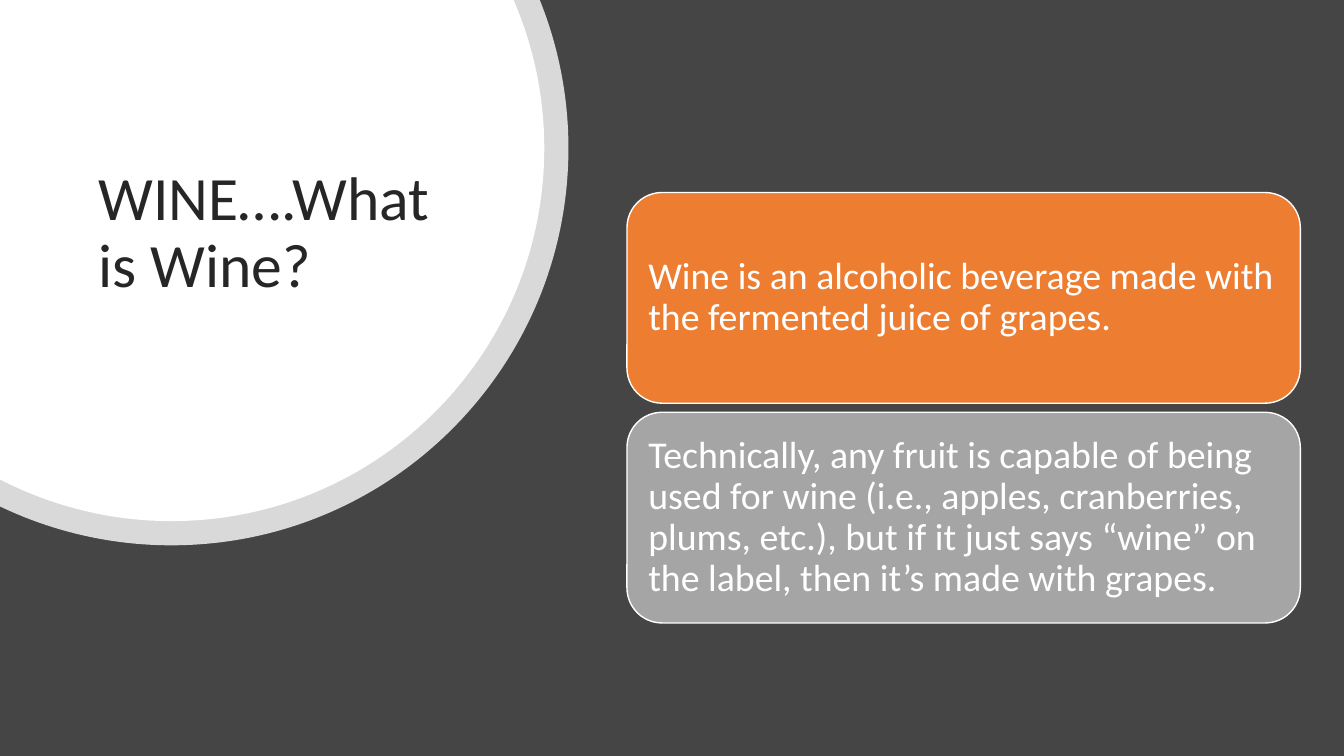
from dataclasses import dataclass
from itertools import pairwise
from math import acos, asin, cos, pi, sin, tan

from lxml.etree import SubElement
from pptx import Presentation
from pptx.dml.color import RGBColor
from pptx.enum.shapes import MSO_SHAPE
from pptx.enum.text import MSO_ANCHOR, PP_ALIGN
from pptx.oxml.ns import qn
from pptx.shapes.autoshape import Shape
from pptx.slide import Slide
from pptx.util import Pt

PX = 9144  # EMU per px, 100 px to the inch


@dataclass(frozen=True)
class Theme:
    font: str = "Calibri"
    background: str = "454545"
    white: str = "FFFFFF"
    ink: str = "262626"
    orange: str = "ED7D31"
    gray: str = "A5A5A5"
    title_size: int = 44
    card_size: int = 27


@dataclass(frozen=True)
class Disc:
    radius: int
    opacity: int  # percent


@dataclass(frozen=True)
class Card:
    text: str
    fill: str


THEME = Theme()
DISC_X, DISC_Y = 170, 147
DISCS = [Disc(394, 80), Disc(370, 100)]
CARD_X, CARD_Y, CARD_W, CARD_H, CARD_GAP, CARD_INSET = 622, 191, 668, 209, 9, 11
CARDS = [
    Card("Wine is an alcoholic beverage made with the fermented juice of grapes.", THEME.orange),
    Card(
        "Technically, any fruit is capable of being used for wine (i.e., apples, "
        "cranberries, plums, etc.), but if it just says “wine” on the label, "
        "then it’s made with grapes.",
        THEME.gray,
    ),
]


def rgb(color: str) -> RGBColor:
    return RGBColor.from_string(color)


def write(sp: Shape, text: str, size: int, color: str) -> None:
    tf = sp.text_frame
    tf.word_wrap = True
    tf.vertical_anchor = MSO_ANCHOR.MIDDLE
    p = tf.paragraphs[0]
    p.text = text
    p.alignment = PP_ALIGN.LEFT
    p.line_spacing = 0.9
    p.font.name = THEME.font
    p.font.size = Pt(size)
    p.font.color.rgb = rgb(color)


def arc_points(radius: int) -> list[tuple[int, int]]:
    """Bezier points from the top edge of the slide to its left edge."""

    def point(angle: float, pull: float = 0) -> tuple[int, int]:
        x = DISC_X + radius * (cos(angle) - pull * sin(angle))
        y = DISC_Y + radius * (sin(angle) + pull * cos(angle))
        return round(x * PX), round(y * PX)

    angles = [-asin(DISC_Y / radius), 0, pi / 2, acos(-DISC_X / radius)]
    points = [point(angles[0])]
    for a, b in pairwise(angles):
        pull = 4 / 3 * tan((b - a) / 4)
        points += [point(a, pull), point(b, -pull), point(b)]
    return points


def draw_disc(s: Slide, disc: Disc) -> None:
    """Draw the part of the disc that lies inside the slide's top left corner."""
    builder = s.shapes.build_freeform(0, 0)
    builder.add_line_segments(arc_points(disc.radius), close=True)
    sp = builder.convert_to_shape()

    # Turn each three segments after the top edge into one curve
    segments = list(sp._element.iter(qn("a:lnTo")))[1:]
    for i in range(0, len(segments), 3):
        trio = segments[i:i + 3]
        outline = trio[0].getparent()
        curve = SubElement(outline, qn("a:cubicBezTo"))
        outline.replace(trio[0], curve)
        for segment in trio:
            curve.append(segment[0])
        for segment in trio[1:]:
            outline.remove(segment)

    sp.shadow.inherit = False
    sp.line.fill.background()
    sp.fill.solid()
    sp.fill.fore_color.rgb = rgb(THEME.white)
    if disc.opacity < 100:
        color = next(sp._element.spPr.iter(qn("a:srgbClr")))
        SubElement(color, qn("a:alpha"), val=str(disc.opacity * 1000))


def draw_card(s: Slide, card: Card, y: int) -> None:
    sp = s.shapes.add_shape(
        MSO_SHAPE.ROUNDED_RECTANGLE, CARD_X * PX, y * PX, CARD_W * PX, CARD_H * PX
    )
    sp.shadow.inherit = False
    sp.fill.solid()
    sp.fill.fore_color.rgb = rgb(card.fill)
    sp.line.color.rgb = rgb(THEME.white)
    sp.line.width = Pt(1)
    tf = sp.text_frame
    tf.margin_left = tf.margin_right = tf.margin_top = tf.margin_bottom = CARD_INSET * PX
    write(sp, card.text, THEME.card_size, THEME.white)


def main() -> None:
    prs = Presentation()
    prs.slide_width, prs.slide_height = 12192000, 750 * PX
    s = prs.slides.add_slide(prs.slide_layouts[6])
    s.background.fill.solid()
    s.background.fill.fore_color.rgb = rgb(THEME.background)

    # Corner discs
    for disc in DISCS:
        draw_disc(s, disc)

    # Title
    title = s.shapes.add_textbox(88 * PX, 66 * PX, 352 * PX, 332 * PX)
    write(title, "WINE….What is Wine?", THEME.title_size, THEME.ink)

    # Cards
    for i, card in enumerate(CARDS):
        draw_card(s, card, CARD_Y + i * (CARD_H + CARD_GAP))

    prs.save("out.pptx")


if __name__ == "__main__":
    main()
